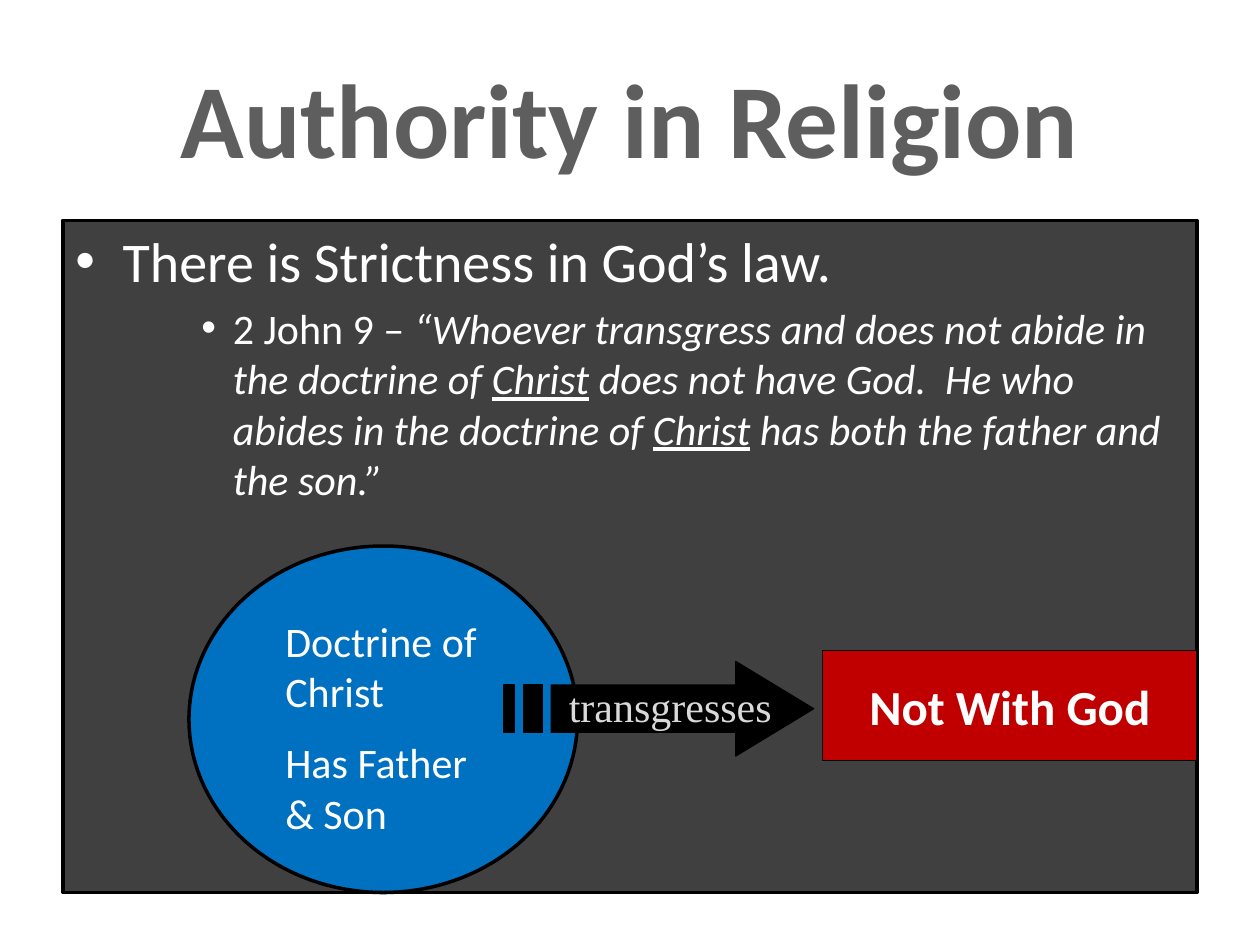
from lxml import etree
from pptx import Presentation
from pptx.dml.color import RGBColor
from pptx.enum.shapes import MSO_SHAPE
from pptx.enum.text import MSO_ANCHOR, PP_ALIGN
from pptx.oxml.ns import qn
from pptx.util import Pt

RECTANGLE, OVAL = MSO_SHAPE.RECTANGLE, MSO_SHAPE.OVAL
TOP, MIDDLE = MSO_ANCHOR.TOP, MSO_ANCHOR.MIDDLE
LEFT, CENTER = PP_ALIGN.LEFT, PP_ALIGN.CENTER

WHITE = RGBColor(0xFF, 0xFF, 0xFF)
BLACK = RGBColor(0x00, 0x00, 0x00)
TITLE_GRAY = RGBColor(0x5E, 0x5E, 0x5E)
PANEL_GRAY = RGBColor(0x40, 0x40, 0x40)
LABEL_GRAY = RGBColor(0xD9, 0xD9, 0xD9)
BLUE = RGBColor(0x00, 0x70, 0xC0)
RED = RGBColor(0xC0, 0x00, 0x00)

# Content: paragraphs are lists of (text, run format)
PLAIN, ITALIC = {}, {"italic": True}
UNDERLINED = {"italic": True, "underline": True}
TITLE = [[("Authority in Religion", PLAIN)]]
POINTS = [
    [("There is Strictness in God’s law.", PLAIN)],
    [("2 John 9 – ", PLAIN),
     ("“Whoever transgress and does not abide in the doctrine of ", ITALIC),
     ("Christ", UNDERLINED),
     (" does not have God.  He who abides in the doctrine of ", ITALIC),
     ("Christ", UNDERLINED),
     (" has both the father and the son.”", ITALIC)],
]
DOCTRINE = [[("Doctrine of Christ", PLAIN)], [("Has Father & Son", PLAIN)]]
OUTCOME = [[("Not With God", PLAIN)]]
ACTION = [[("transgresses", PLAIN)]]

# Bullet layout per point: font size, left margin, hanging indent
POINT_LEVELS = [(32, 27, 27), (24, 90, 18)]

# Striped arrow: horizontal extents and the four levels it spans
STRIPES = [(288, 294), (299, 310)]
SHAFT_LEFT, HEAD_LEFT, TIP = 315, 420.5, 465
HEAD_TOP, SHAFT_TOP, SHAFT_BOTTOM, HEAD_BOTTOM = 378, 391.5, 418.5, 432


def paint(part, fill, line_width):
    part.shadow.inherit = False
    part.fill.solid()
    part.fill.fore_color.rgb = fill
    part.line.color.rgb = BLACK
    part.line.width = Pt(line_width)


def add_block(kind, box, fill, line_width):
    block = slide.shapes.add_shape(kind, *map(Pt, box))
    paint(block, fill, line_width)
    return block


def add_label(box):
    return slide.shapes.add_textbox(*map(Pt, box))


def write(part, paragraphs, size, color, font="Calibri", bold=False,
          align=LEFT, anchor=TOP, gap=0, wrap=True, levels=None):
    frame = part.text_frame
    frame.word_wrap = wrap
    frame.vertical_anchor = anchor
    for index, runs in enumerate(paragraphs):
        paragraph = frame.paragraphs[0] if index == 0 else frame.add_paragraph()
        paragraph.alignment = align
        if index:
            paragraph.space_before = Pt(gap)
        if levels:
            size, margin, hanging = levels[index]
            properties = paragraph._p.get_or_add_pPr()
            properties.set("marL", str(Pt(margin)))
            properties.set("indent", str(-Pt(hanging)))
            etree.SubElement(properties, qn("a:buFont"), typeface="Arial")
            etree.SubElement(properties, qn("a:buChar"), char="•")
        base = {"name": font, "size": Pt(size), "bold": bold}
        for text, style in runs:
            run = paragraph.add_run()
            run.text = text
            for attribute, value in {**base, **style}.items():
                setattr(run.font, attribute, value)
            run.font.color.rgb = color


def add_striped_arrow():
    bars = [[(left, SHAFT_TOP), (left, SHAFT_BOTTOM),
             (right, SHAFT_BOTTOM), (right, SHAFT_TOP)] for left, right in STRIPES]
    head = [(HEAD_LEFT, HEAD_TOP), (HEAD_LEFT, SHAFT_TOP), (SHAFT_LEFT, SHAFT_TOP),
            (SHAFT_LEFT, SHAFT_BOTTOM), (HEAD_LEFT, SHAFT_BOTTOM),
            (HEAD_LEFT, HEAD_BOTTOM), (TIP, (HEAD_TOP + HEAD_BOTTOM) / 2)]
    contours = [[(Pt(x), Pt(y)) for x, y in contour] for contour in [head, *bars]]
    builder = slide.shapes.build_freeform(*contours[0][0])
    for index, contour in enumerate(contours):
        if index:
            builder.move_to(*contour[0])
        builder.add_line_segments(contour[1:], close=True)
    paint(builder.convert_to_shape(), BLACK, 0.75)


presentation = Presentation()
presentation.slide_width, presentation.slide_height = Pt(720), Pt(540)
slide = presentation.slides.add_slide(presentation.slide_layouts[6])

# Title and main panel
write(add_label((36, 21.6, 648, 90)), TITLE, 60, TITLE_GRAY,
      bold=True, align=CENTER, anchor=MIDDLE)
panel = add_block(RECTANGLE, (36, 126, 648, 384), PANEL_GRAY, 2.25)
write(panel, POINTS, 32, WHITE, gap=4.8, levels=POINT_LEVELS)

# Doctrine circle with its label
add_block(OVAL, (108, 312, 222, 198), BLUE, 2)
write(add_label((156, 348, 138, 138)), DOCTRINE, 24, WHITE, gap=12)

# Outcome box
outcome = add_block(RECTANGLE, (470, 371.6, 214, 63), RED, 0.75)
write(outcome, OUTCOME, 28, WHITE, bold=True, align=CENTER, anchor=MIDDLE, wrap=False)

# Arrow leading out of the circle
add_striped_arrow()
write(add_label((318, 385.2, 134.6, 36)), ACTION, 24, LABEL_GRAY,
      font="Times New Roman", wrap=False)

presentation.save("out.pptx")
